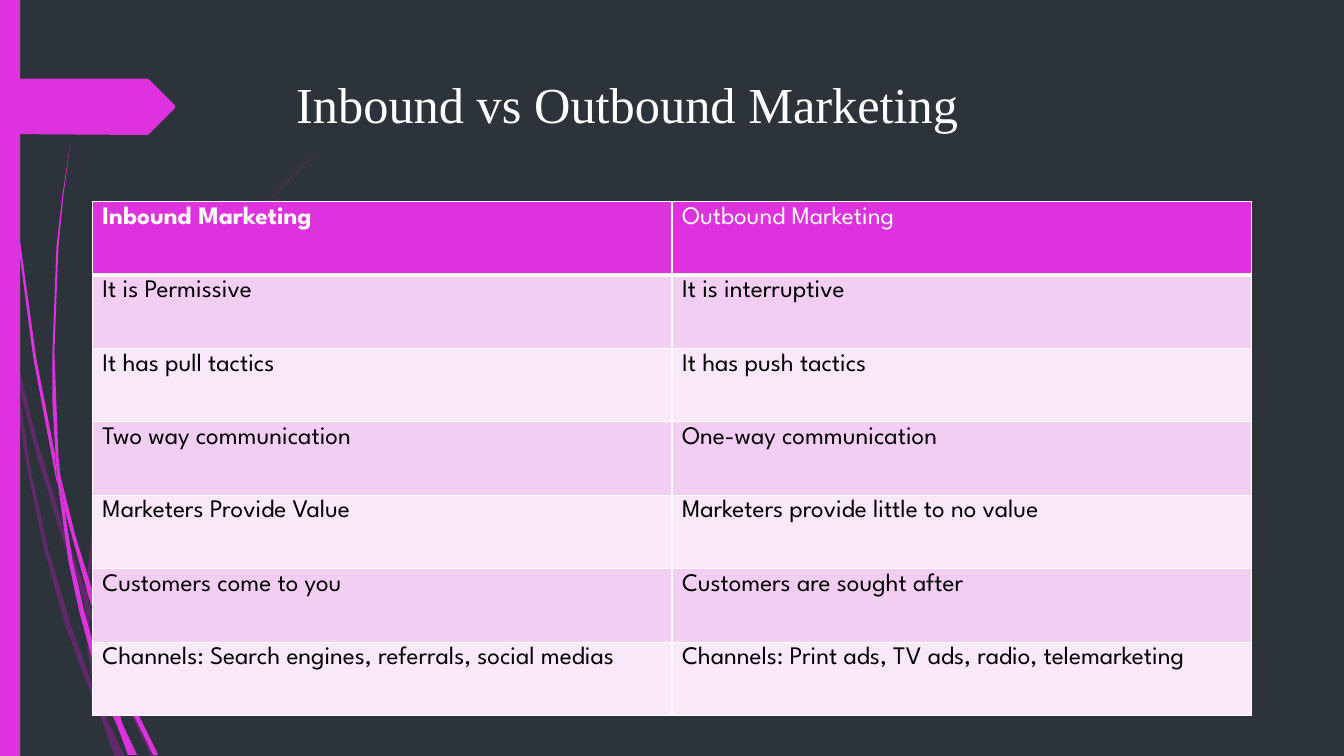
from lxml.etree import SubElement
from pptx import Presentation
from pptx.dml.color import RGBColor
from pptx.enum.shapes import MSO_SHAPE
from pptx.enum.text import MSO_ANCHOR
from pptx.oxml.ns import qn
from pptx.util import Pt

DARK = RGBColor(0x2C, 0x33, 0x3A)
MAGENTA = RGBColor(0xDE, 0x32, 0xDE)
PURPLE = RGBColor(0xB0, 0x1C, 0xB0)
BAND_DARK = RGBColor(0xF2, 0xCE, 0xF2)
BAND_LIGHT = RGBColor(0xF9, 0xE8, 0xF9)
WHITE = RGBColor(0xFF, 0xFF, 0xFF)
BLACK = RGBColor(0x00, 0x00, 0x00)

GRID = 0.72  # points in one unit of the outlines below
TITLE_FONT = "Times New Roman"
TABLE_FONT = "League Spartan"

# Outlines of the grass blades, as x, y corners
PURPLE_BLADES = [
    [(11, 350), (9, 322), (0, 282), (0, 299), (10, 344)],
    [(58, 522), (84, 599), (85, 586), (62, 520), (36, 434), (14, 345), (17, 376), (36, 450)],
    [(92, 607), (88, 596), (88, 610), (123, 694), (150, 751), (155, 751), (127, 692)],
    [(119, 751), (124, 751), (105, 711)],
    [(93, 683), (70, 619), (48, 545), (31, 469), (17, 376), (11, 350), (18, 411), (28, 470),
     (44, 546), (65, 621), (92, 693), (101, 714), (99, 707)],
    [(84, 599), (87, 646), (93, 683), (96, 692), (105, 711), (103, 706), (91, 646), (88, 608)],
    [(88, 584), (95, 522), (110, 462), (132, 405), (160, 349), (192, 296), (229, 245),
     (268, 198), (290, 175), (312, 154), (312, 153), (289, 175), (268, 197), (228, 244),
     (191, 294), (158, 348), (130, 402), (107, 461), (92, 521), (85, 584), (85, 586), (88, 596)],
    [(101, 714), (114, 751), (119, 751)],
    [(88, 608), (88, 596), (85, 586), (84, 599)],
    [(96, 692), (93, 683), (99, 707), (101, 714), (119, 751), (105, 711)],
]
MAGENTA_BLADES = [
    [(7, 110), (17, 233), (33, 355), (56, 477), (57, 481), (55, 457), (55, 453), (36, 355),
     (19, 232), (8, 109), (5, 48), (4, 0), (3, 0), (4, 48)],
    [(88, 592), (106, 645), (106, 631), (93, 590), (75, 532), (60, 472), (64, 505)],
    [(113, 649), (110, 641), (111, 656), (132, 708), (152, 749), (157, 749), (136, 706)],
    [(110, 691), (98, 657), (84, 608), (72, 556), (64, 505), (57, 477), (68, 557), (79, 608),
     (93, 659), (111, 708), (117, 722), (116, 717)],
    [(60, 472), (58, 453), (54, 349), (58, 245), (63, 193), (70, 141), (62, 193), (56, 245),
     (52, 349), (52, 400), (55, 449)],
    [(133, 749), (136, 749), (122, 719)],
    [(57, 477), (64, 505), (60, 472), (55, 449), (55, 453)],
    [(111, 633), (115, 592), (125, 552), (140, 513), (158, 476), (180, 440), (205, 406),
     (231, 374), (245, 359), (261, 344), (260, 344), (245, 358), (231, 373), (204, 405),
     (178, 439), (156, 474), (137, 512), (122, 551), (111, 591), (106, 631), (110, 641)],
    [(117, 722), (127, 749), (131, 749)],
    [(106, 645), (110, 691), (116, 706), (122, 719), (121, 716), (114, 686), (111, 656)],
    [(106, 645), (111, 656), (110, 641), (106, 631)],
    [(116, 706), (110, 691), (116, 717), (117, 722), (130, 749), (133, 749), (122, 719)],
]
TITLE_ARROW = [(0, 78), (146, 78), (148, 79), (173, 104), (174, 106), (173, 108),
               (148, 133), (146, 134), (0, 133)]

COMPARISON = [
    ("Inbound Marketing", "Outbound Marketing"),
    ("It is Permissive", "It is interruptive"),
    ("It has pull tactics", "It has push tactics"),
    ("Two way communication", "One-way communication"),
    ("Marketers Provide Value", "Marketers provide little to no value"),
    ("Customers come to you", "Customers are sought after"),
    ("Channels: Search engines, referrals, social medias",
     "Channels: Print ads, TV ads, radio, telemarketing"),
]


def paint(shape, color, opacity=100):
    shape.shadow.inherit = False
    shape.line.fill.background()
    shape.fill.solid()
    shape.fill.fore_color.rgb = color
    if opacity < 100:
        color_tag = shape.fill._xPr.find(qn("a:solidFill"))[0]
        SubElement(color_tag, qn("a:alpha"), val=str(opacity * 1000))


def add_outline(page, corners, color, opacity=100):
    builder = page.shapes.build_freeform(*corners[0], scale=Pt(GRID))
    builder.add_line_segments(corners[1:], close=True)
    paint(builder.convert_to_shape(), color, opacity)


def write(frame, text, font, size, color, bold=False):
    span = frame.paragraphs[0].add_run()
    span.text = text
    span.font.name = font
    span.font.size = Pt(size)
    span.font.color.rgb = color
    span.font.bold = bold


def add_title(page, text):
    box = page.shapes.add_textbox(Pt(204.5), Pt(49), Pt(702), Pt(100.8))
    box.text_frame.word_wrap = True
    box.text_frame.vertical_anchor = MSO_ANCHOR.TOP
    write(box.text_frame, text, TITLE_FONT, 36, WHITE)


def set_borders(cell, bottom_width):
    properties = cell._tc.get_or_add_tcPr()
    widths = {"a:lnL": 1, "a:lnR": 1, "a:lnT": 1, "a:lnB": bottom_width}
    for side, width in widths.items():
        line = SubElement(properties, qn(side), w=str(Pt(width)))
        fill = SubElement(line, qn("a:solidFill"))
        SubElement(fill, qn("a:srgbClr"), val=str(WHITE))


def add_comparison(page, rows):
    frame = page.shapes.add_table(len(rows), 2, Pt(66), Pt(144), Pt(828), Pt(367.22))
    table = frame.table
    for column in table.columns:
        column.width = Pt(414)
    for number, texts in enumerate(rows):
        table.rows[number].height = Pt(52.46)
        header = number == 0
        band = BAND_DARK if number % 2 else BAND_LIGHT
        for column, text in enumerate(texts):
            cell = table.cell(number, column)
            set_borders(cell, 3 if header else 1)
            cell.fill.solid()
            cell.fill.fore_color.rgb = MAGENTA if header else band
            write(cell.text_frame, text, TABLE_FONT, 18, WHITE if header else BLACK,
                  bold=header and column == 0)


def main():
    deck = Presentation()
    deck.slide_width, deck.slide_height = Pt(960), Pt(540)
    page = deck.slides.add_slide(deck.slide_layouts[6])
    page.background.fill.solid()
    page.background.fill.fore_color.rgb = DARK

    # Grass blades
    for blade in PURPLE_BLADES:
        add_outline(page, blade, PURPLE, opacity=40)
    for blade in MAGENTA_BLADES:
        add_outline(page, blade, MAGENTA)

    # Side bar and title arrow
    bar = page.shapes.add_shape(MSO_SHAPE.RECTANGLE, Pt(0), Pt(0), Pt(14.4), Pt(540))
    paint(bar, MAGENTA)
    add_outline(page, TITLE_ARROW, MAGENTA)

    # Title and table
    add_title(page, "Inbound vs Outbound Marketing")
    add_comparison(page, COMPARISON)
    deck.save("out.pptx")


if __name__ == "__main__":
    main()
